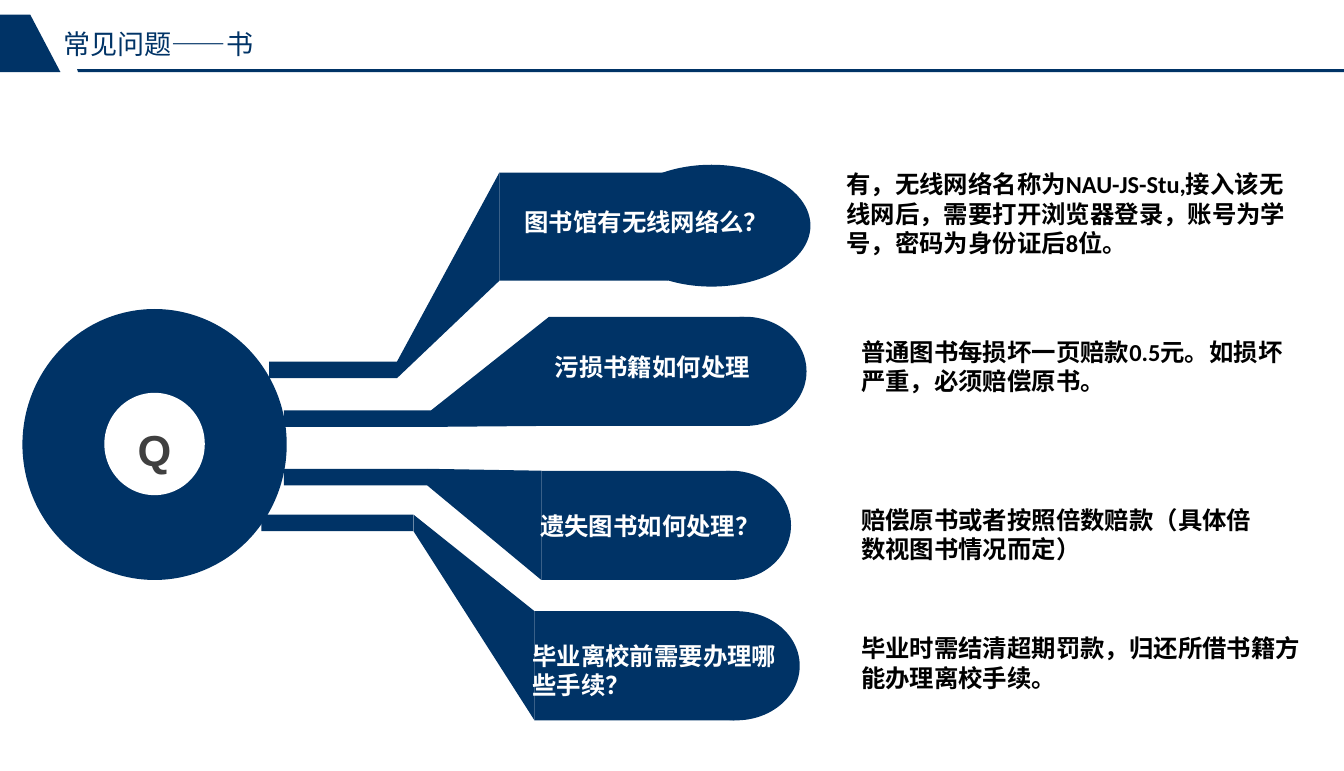
"""Build the library FAQ slide: a question ring with four branches and their answers."""
from pptx import Presentation
from pptx.dml.color import RGBColor
from pptx.enum.shapes import MSO_SHAPE as Shape
from pptx.enum.text import MSO_ANCHOR as Anchor, MSO_AUTO_SIZE as AutoSize, PP_ALIGN as Align
from pptx.util import Inches, Pt

NAVY = RGBColor(0x00, 0x33, 0x66)
WHITE = RGBColor(0xFF, 0xFF, 0xFF)
BLACK = RGBColor(0x00, 0x00, 0x00)
GRAY = RGBColor(0x40, 0x40, 0x40)

presentation = Presentation()
presentation.slide_width = Inches(13.78)
presentation.slide_height = Inches(7.91)
slide = presentation.slides.add_slide(presentation.slide_layouts[6])


def add_solid(outline, color=NAVY):
    """Add a preset (kind, left, top, width, height) or a polygon (list of points)."""
    if isinstance(outline, list):
        points = [(Inches(x), Inches(y)) for x, y in outline]
        builder = slide.shapes.build_freeform(*points[0])
        builder.add_line_segments(points[1:], close=True)
        shape = builder.convert_to_shape()
    else:
        kind, *box = outline
        shape = slide.shapes.add_shape(kind, *map(Inches, box))
    shape.shadow.inherit = False
    shape.fill.solid()
    shape.fill.fore_color.rgb = color
    shape.line.fill.background()
    return shape


def add_text(text, box, color, wrap=True, size=18, font_name="Calibri", bold=True):
    """Add a text box that grows with its text."""
    text_box = slide.shapes.add_textbox(*map(Inches, box))
    frame = text_box.text_frame
    frame.word_wrap = wrap
    frame.auto_size = AutoSize.SHAPE_TO_FIT_TEXT
    frame.text = text
    font = frame.paragraphs[0].runs[0].font
    font.name, font.size, font.bold = font_name, Pt(size), bold
    font.color.rgb = color
    return frame


STEM_HEIGHT = 0.17
branches = [
    ((2.76, 3.71, 4.07), (5.12, 1.77, 1.73, 1.11), (6.28, 1.69, 2.03, 1.25)),
    ((2.91, 4.21, 4.42), (5.63, 3.25, 2, 1.12), (7.01, 3.25, 1.26, 1.12)),
    ((2.91, 4.81, 4.38), (5.55, 4.83, 1.94, 1.12), (6.89, 4.83, 1.22, 1.12)),
    ((2.68, 5.28, 4.24), (5.48, 6.27, 2.05, 1.12), (6.9, 6.27, 1.3, 1.12)),
]
for (stem_left, stem_top, stem_right), panel, cap in branches:
    panel_left, panel_top, _, panel_height = panel
    add_solid((Shape.RECTANGLE, *panel))
    add_solid((Shape.RECTANGLE, stem_left, stem_top, stem_right - stem_left, STEM_HEIGHT))
    add_solid([
        (stem_right, stem_top),
        (panel_left, panel_top),
        (panel_left, panel_top + panel_height),
        (stem_right, stem_top + STEM_HEIGHT),
    ])
    add_solid((Shape.OVAL, *cap))

add_solid((Shape.OVAL, 0.23, 3.17, 2.71, 2.78))
hub = add_solid((Shape.OVAL, 1.07, 4.03, 1.03, 1.05), WHITE)
hub_frame = hub.text_frame
hub_frame.margin_left = hub_frame.margin_right = 0
hub_frame.margin_top = hub_frame.margin_bottom = 0
hub_frame.vertical_anchor = Anchor.MIDDLE
hub_frame.text = "Q"
hub_paragraph = hub_frame.paragraphs[0]
hub_paragraph.alignment = Align.CENTER
hub_paragraph.line_spacing = 1.2
hub_font = hub_paragraph.runs[0].font
hub_font.name, hub_font.size, hub_font.bold = "Arial", Pt(32), True
hub_font.color.rgb = GRAY

add_solid([(0.79, 0.71), (13.78, 0.71), (13.78, 0.74), (0.8, 0.74)])
add_solid([(0.31, 0.15), (0.62, 0.74), (0, 0.74), (0, 0.15)])
title = add_text("常见问题——书", (0.65, 0.28, 3.29, 0.34), NAVY,
                 size=20, font_name="Arial", bold=False)
title.margin_left = title.margin_right = title.margin_top = title.margin_bottom = 0

questions = [
    ("图书馆有无线网络么？", (5.28, 2.08, 2.93, 0.4), True),
    ("污损书籍如何处理", (5.59, 3.56, 2.24, 0.4), False),
    ("遗失图书如何处理？", (5.44, 5.2, 2.49, 0.4), False),
    ("毕业离校前需要办理哪些手续？", (5.36, 6.53, 2.91, 0.71), True),
]
for question, box, wrap in questions:
    add_text(question, box, WHITE, wrap)

answers = [
    ("有，无线网络名称为NAU-JS-Stu,接入该无线网后，需要打开浏览器登录，账号为学号，密码为身份证后8位。",
     (8.58, 1.69, 4.82, 1.01)),
    ("普通图书每损坏一页赔款0.5元。如损坏严重，必须赔偿原书。", (8.73, 3.41, 4.59, 0.71)),
    ("赔偿原书或者按照倍数赔款（具体倍数视图书情况而定）", (8.73, 5.13, 4.36, 0.71)),
    ("毕业时需结清超期罚款，归还所借书籍方能办理离校手续。", (8.73, 6.45, 4.75, 0.71)),
]
for answer, box in answers:
    add_text(answer, box, BLACK)

presentation.save("out.pptx")
